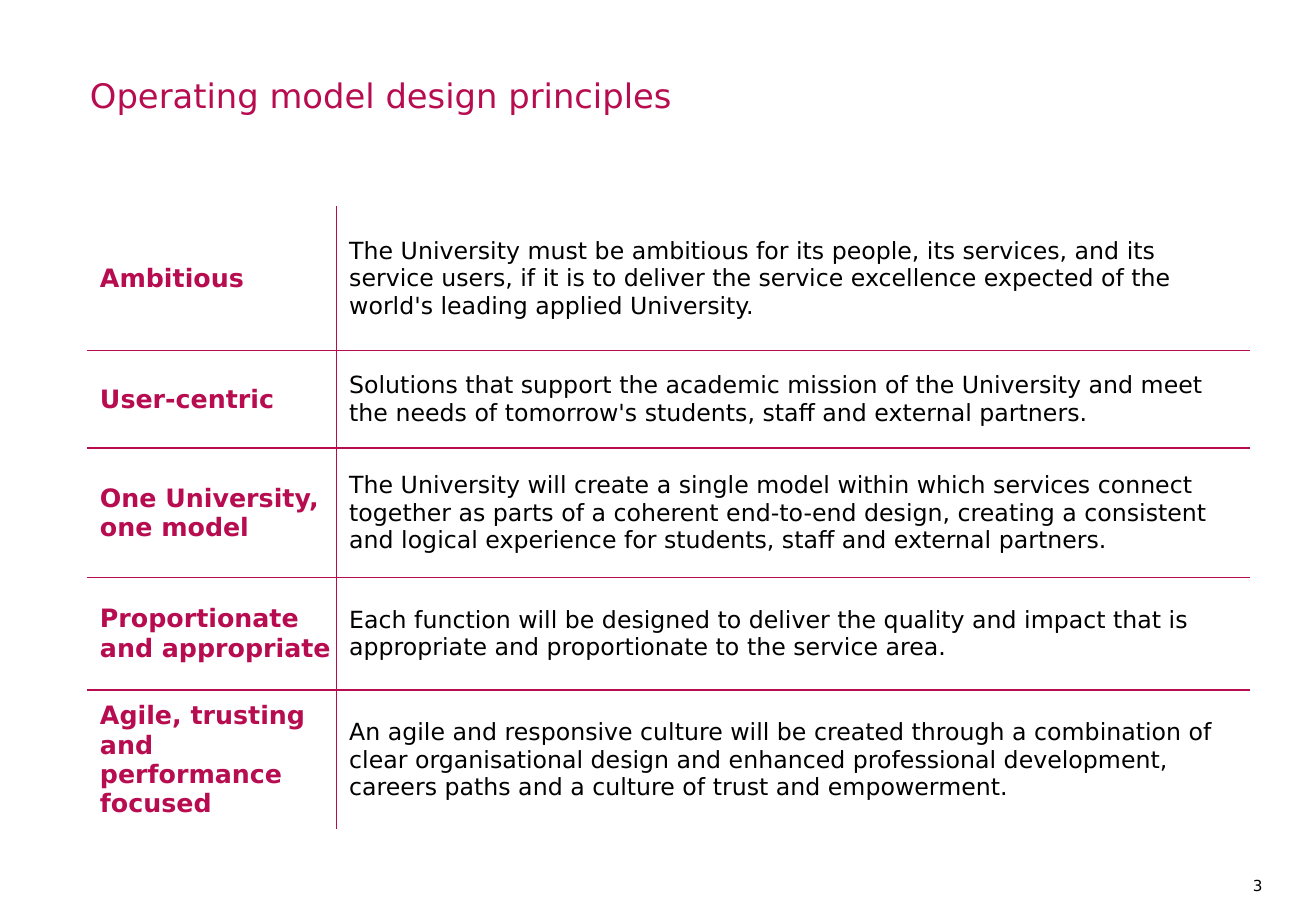
from pptx import Presentation
from pptx.dml.color import RGBColor as RGB
from pptx.enum.text import MSO_ANCHOR as Anchor, PP_ALIGN as Align
from pptx.oxml import parse_xml
from pptx.oxml.ns import nsdecls
from pptx.util import Cm, Pt

FONT = "DejaVu Sans"
RED, BLACK, WHITE = "B70D50", "000000", "FFFFFF"


def write(para, text, size, tint, bold=False):
    run = para.add_run()
    run.text = text
    font = run.font
    font.name, font.size, font.bold = FONT, Pt(size), bold
    font.color.rgb = RGB.from_string(tint)


def edge(cell, side, tint):
    cell._tc.get_or_add_tcPr().append(parse_xml(
        f'<a:ln{side} {nsdecls("a")} w="12700"><a:solidFill>'
        f'<a:srgbClr val="{tint}"/></a:solidFill></a:ln{side}>'))


deck = Presentation()
deck.slide_width, deck.slide_height = Cm(27.51), Cm(19.05)
slide = deck.slides.add_slide(deck.slide_layouts[5])

# Title
title = slide.shapes.title
title.left, title.top, title.width, title.height = Cm(1.88), Cm(1.52), Cm(23.77), Cm(0.94)
frame = title.text_frame
frame.margin_left = frame.margin_right = frame.margin_top = frame.margin_bottom = 0
frame.vertical_anchor = Anchor.MIDDLE
frame.word_wrap = True
frame.paragraphs[0].alignment = Align.LEFT
write(frame.paragraphs[0], "Operating model design principles", 20, RED)

# Principles: name lines, meaning, row height in cm
rows = [
    (["Ambitious"],
     "The University must be ambitious for its people, its services, and its service users, "
     "if it is to deliver the service excellence expected of the world's leading applied "
     "University.", 3.01),
    (["User-centric"],
     "Solutions that support the academic mission of the University and meet the needs of "
     "tomorrow's students, staff and external partners.", 2.04),
    (["One University,", "one model"],
     "The University will create a single model within which services connect together as "
     "parts of a coherent end-to-end design, creating a consistent and logical experience "
     "for students, staff and external partners.", 2.71),
    (["Proportionate and appropriate"],
     "Each function will be designed to deliver the quality and impact that is appropriate "
     "and proportionate to the service area.", 2.35),
    (["Agile, trusting and performance focused"],
     "An agile and responsive culture will be created through a combination of clear "
     "organisational design and enhanced professional development, careers paths and a "
     "culture of trust and empowerment.", 2.92),
]

# Table with inner rules only
table = slide.shapes.add_table(len(rows), 2, Cm(1.83), Cm(4.32), Cm(24.28), Cm(13.03)).table
table.first_row = table.horz_banding = False
table.columns[0].width, table.columns[1].width = Cm(5.21), Cm(19.07)
last = len(rows) - 1

for i, (name, text, high) in enumerate(rows):
    table.rows[i].height = Cm(high)
    for j, (lines, size, tint) in enumerate([(name, 15, RED), ([text], 14, BLACK)]):
        cell = table.cell(i, j)
        cell.margin_left = Cm(0.26)
        cell.margin_right = cell.margin_top = cell.margin_bottom = Cm(0.1)
        cell.vertical_anchor = Anchor.MIDDLE
        inner = {"L": j == 1, "R": j == 0, "T": i > 0, "B": i < last}
        for side, shown in inner.items():
            edge(cell, side, RED if shown else WHITE)
        cell.fill.solid()
        cell.fill.fore_color.rgb = RGB.from_string(WHITE)
        frame = cell.text_frame
        for n, line in enumerate(lines):
            para = frame.add_paragraph() if n else frame.paragraphs[0]
            write(para, line, size, tint, bold=j == 0)

# Page number
frame = slide.shapes.add_textbox(Cm(25.7), Cm(18.33), Cm(0.69), Cm(0.28)).text_frame
frame.margin_left = frame.margin_right = frame.margin_top = frame.margin_bottom = 0
frame.word_wrap = True
frame.paragraphs[0].alignment = Align.RIGHT
write(frame.paragraphs[0], "3", 9, BLACK)

deck.save("out.pptx")
